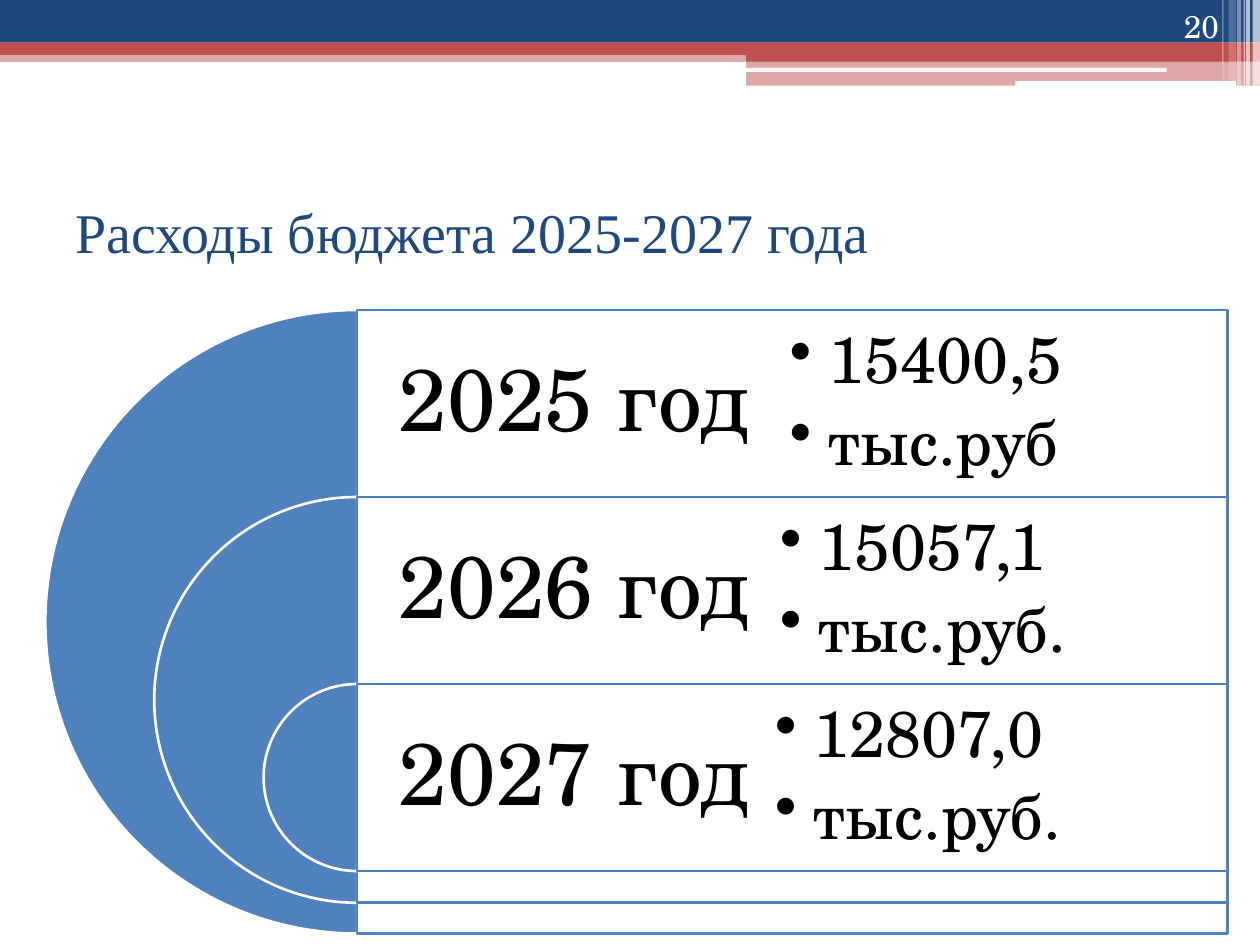
from lxml import etree
from pptx import Presentation
from pptx import util as u
from pptx.dml.color import RGBColor
from pptx.enum import shapes, text
from pptx.oxml.ns import qn

# Content: year, amount, unit, left and width of the amount box (cm)
ROWS = [
    ("2025 год", "15400,5", "тыс.руб", 15.54, 9.63),
    ("2026 год", "15057,1", "тыс.руб.", 15.34, 10.01),
    ("2027 год", "12807,0", "тыс.руб.", 15.24, 10.21),
]
TITLE = "Расходы бюджета 2025-2027 года"
PAGE = "20"
HEX = {"navy": "1F497D", "red": "C0504D", "blue": "4F81BD",
       "white": "FFFFFF", "black": "000000"}
SERIF, SCHOOL = "Times New Roman", "TeX Gyre Schola"

# Header bands: left, top, width, height (cm), colour, opacity
BANDS = [
    (0, 1.02, 25.4, 0.23, "red", 50),
    (0, 0, 25.4, 0.86, "navy", 100),
    (0, 0.86, 25.4, 0.25, "red", 100),
    (15.04, 0.99, 10.36, 0.25, "red", 100),
    (15.04, 1.23, 10.36, 0.5, "red", 50),
]
SLITS = [(15.01, 1.37, 8.51, 0.08), (20.47, 1.63, 4.45, 0.1)]
# Corner stripes: left, width, height (cm), opacity
STRIPES = [
    (25.25, 0.15, 1.73, 65), (25.12, 0.08, 1.73, 65),
    (25.07, 0.03, 1.73, 60), (24.94, 0.08, 1.73, 40),
    (24.77, 0.15, 1.63, 20), (24.64, 0.03, 1.63, 30),
]

# Diagram (cm)
MID, TOP, STEP, WIDE = 7.2, 6.25, 3.77, 17.55
SIZES = [12.57, 8.18, 3.77]
LABEL = 8.77

KIND = shapes.MSO_SHAPE
MID_V = text.MSO_ANCHOR.MIDDLE

deck = Presentation()
deck.slide_width, deck.slide_height = u.Cm(25.4), u.Cm(19.05)
page = deck.slides.add_slide(deck.slide_layouts[6])


def tint(name):
    return RGBColor.from_string(HEX[name])


def draw(kind, box, fill, alpha=100, line=None):
    part = page.shapes.add_shape(kind, *map(u.Cm, box))
    part.shadow.inherit = False
    part.fill.solid()
    part.fill.fore_color.rgb = tint(fill)
    if alpha < 100:
        clr = part.fill._xPr.find(".//" + qn("a:srgbClr"))
        etree.SubElement(clr, qn("a:alpha"), val=str(alpha * 1000))
    if line:
        part.line.color.rgb = tint(line)
        part.line.width = u.Pt(1.5)
    else:
        part.line.fill.background()
    return part


def write(box, lines, size, font, color, inset=None, align=None,
          anchor=MID_V, space=None, dots=False):
    frame = page.shapes.add_textbox(*map(u.Cm, box)).text_frame
    frame.word_wrap = True
    frame.vertical_anchor = anchor
    if inset:
        frame.margin_left = frame.margin_right = u.Cm(inset)
        frame.margin_top = frame.margin_bottom = u.Cm(inset)
    frame.text = "\n".join(lines)
    for par in frame.paragraphs:
        par.alignment = align
        par.line_spacing = space
        if dots:
            par.space_after = u.Pt(6.5)
            prop = par._p.get_or_add_pPr()
            prop.set("marL", str(u.Cm(0.79)))
            prop.set("indent", str(-u.Cm(0.79)))
            etree.SubElement(prop, qn("a:buChar"), char="•")
        par.font.size = u.Pt(size)
        par.font.name = font
        par.font.color.rgb = tint(color)


# Header
for *box, color, alpha in BANDS:
    draw(KIND.RECTANGLE, box, color, alpha)
for box in SLITS:
    draw(KIND.ROUNDED_RECTANGLE, box, "white")
for left, wide, high, alpha in STRIPES:
    draw(KIND.RECTANGLE, (left, 0, wide, high), "white", alpha)

# Title
write((1.27, 3.18, 22.86, 2.97), [TITLE], 32, SERIF, "navy")

# Nested half circles with year rows
for i, (size, row) in enumerate(zip(SIZES, ROWS)):
    top = TOP + i * STEP
    pie = draw(KIND.PIE, (MID - size / 2, top, size, size), "blue",
               line="white")
    pie.adjustments[0], pie.adjustments[1] = 54, 162
    draw(KIND.RECTANGLE, (MID, top, WIDE, size), "white", 90, "blue")
    write((MID, top, LABEL, STEP), [row[0]], 50, SCHOOL, "black", 0.53,
          text.PP_ALIGN.CENTER, space=0.9)

# Amounts
for i, (_, sum_, unit, left, wide) in enumerate(ROWS):
    write((left, TOP + i * STEP, wide, STEP), [sum_, unit], 37, SCHOOL,
          "black", 0.38, space=0.9, dots=True)

# Page number
write((22.71, 0, 2.11, 1.02), [PAGE], 18, SCHOOL, "white",
      align=text.PP_ALIGN.RIGHT, anchor=text.MSO_ANCHOR.BOTTOM)

deck.save("out.pptx")
